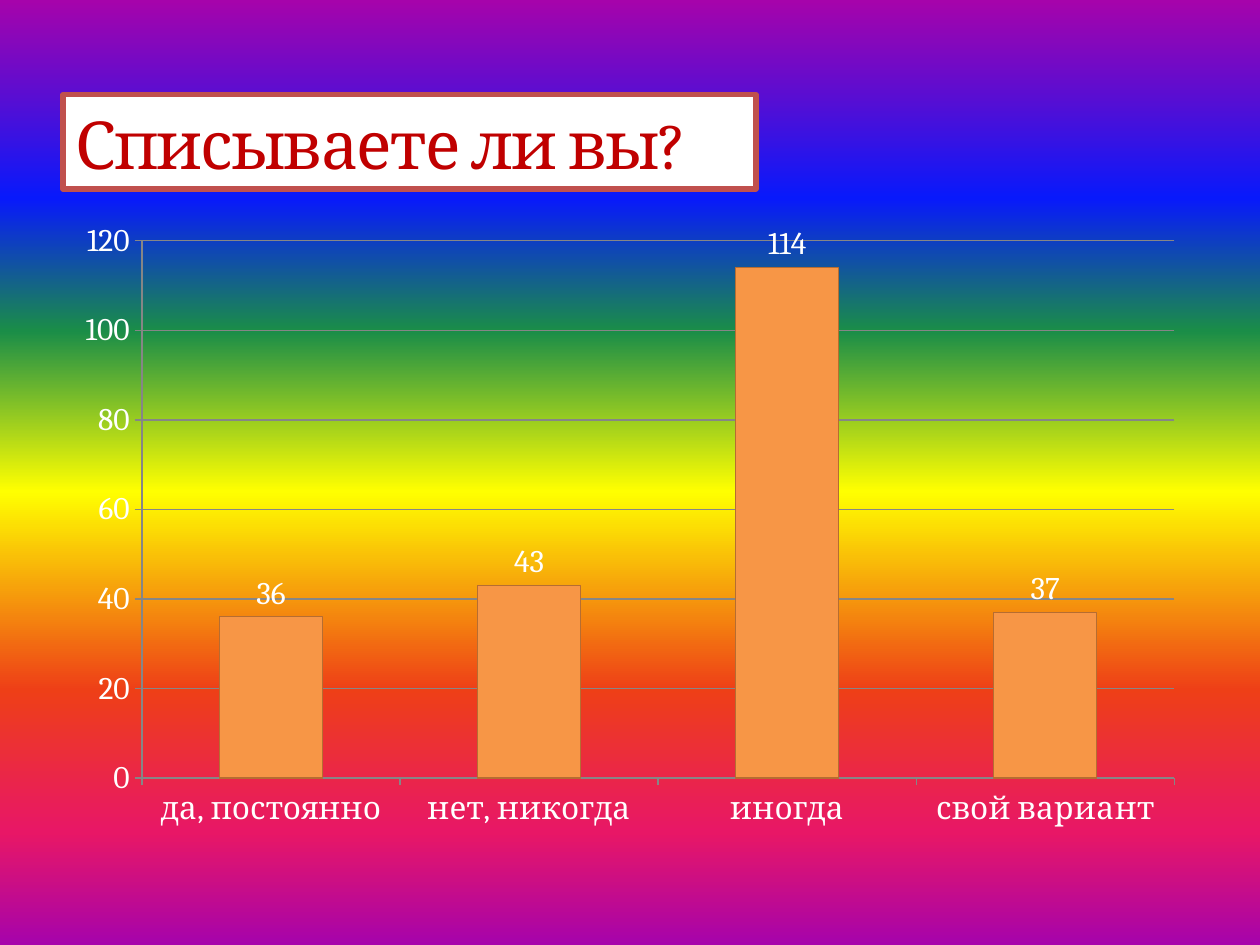
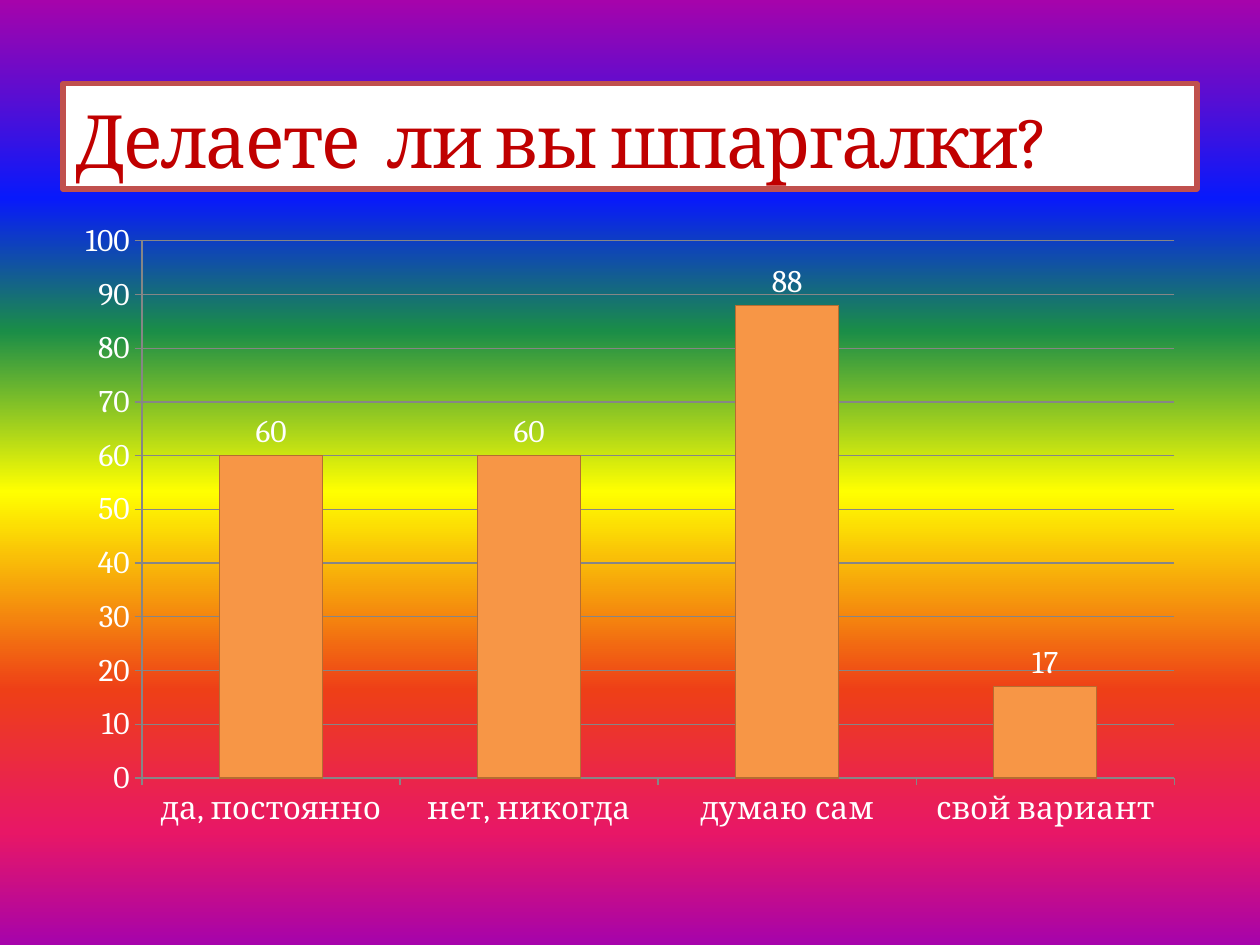
from lxml.etree import SubElement
from pptx import Presentation
from pptx.chart.data import CategoryChartData
from pptx.dml.color import RGBColor
from pptx.enum.chart import XL_CHART_TYPE, XL_LABEL_POSITION, XL_TICK_MARK
from pptx.enum.shapes import MSO_SHAPE
from pptx.enum.text import MSO_ANCHOR, PP_ALIGN
from pptx.oxml import parse_xml
from pptx.oxml.ns import nsdecls, qn
from pptx.util import Cm, Pt

HUES = {
    "white": "FFFFFF", "title": "C00000", "frame": "C0504D", "edge": "1B406E",
    "bar": "F79646", "rim": "B66D31", "grid": "868686",
}
BANDS = [
    (0, "A603AB"), (21, "0819FB"), (35, "1A8D48"), (52, "FFFF00"),
    (73, "EE3F17"), (88, "E81766"), (100, "A603AB"),
]
FONT = "Cambria"
LEFT, BASE = 1.27, 3.81
SLIDES = [
    ("Списываете ли вы?", 37.8, 13.97, 1.9, "иногда", (36, 43, 114, 37), 120, 20),
    ("Делаете  ли вы шпаргалки?", 42, 22.86, 2.12, "думаю сам", (60, 60, 88, 17), 100, 10),
]


def hue(name):
    return RGBColor.from_string(HUES[name])


def ink(line, name, width):
    line.color.rgb = hue(name)
    line.width = Pt(width)


deck = Presentation()
deck.slide_width, deck.slide_height = Cm(25.4), Cm(19.05)

for title, size, width, height, third, votes, top, step in SLIDES:
    slide = deck.slides.add_slide(deck.slide_layouts[6])
    slide.background.fill.gradient()
    grad = slide.element.find(".//" + qn("a:gradFill"))
    stops = grad.find(qn("a:gsLst"))
    for stop in list(stops):
        stops.remove(stop)
    for place, tint in BANDS:
        stop = SubElement(stops, qn("a:gs"), pos=str(place * 1000))
        SubElement(stop, qn("a:srgbClr"), val=tint)
    grad.find(qn("a:lin")).set("ang", "5400000")

    data = CategoryChartData()
    data.categories = ["да, постоянно", "нет, никогда", third, "свой вариант"]
    data.add_series("Series 1", votes)
    chart = slide.shapes.add_chart(
        XL_CHART_TYPE.COLUMN_CLUSTERED, Cm(LEFT), Cm(4.23), Cm(22.86), Cm(12.7), data
    ).chart
    chart.has_legend = False
    chart.has_title = False
    chart.font.name = FONT
    chart.font.size = Pt(18)
    chart.font.color.rgb = hue("white")
    for axis in (chart.category_axis, chart.value_axis):
        axis.major_tick_mark = XL_TICK_MARK.OUTSIDE
        ink(axis.format.line, "grid", 0.75)
    scale = chart.value_axis
    scale.minimum_scale, scale.maximum_scale, scale.major_unit = 0, top, step
    scale.has_major_gridlines = True
    ink(scale.major_gridlines.format.line, "grid", 0.75)

    plot = chart.plots[0]
    plot.gap_width = 150
    plot.vary_by_categories = False
    plot.has_data_labels = True
    plot.data_labels.show_value = True
    plot.data_labels.position = XL_LABEL_POSITION.OUTSIDE_END
    bars = plot.series[0].format
    bars.fill.solid()
    bars.fill.fore_color.rgb = hue("bar")
    ink(bars.line, "rim", 0.75)

    box = slide.shapes.add_shape(
        MSO_SHAPE.RECTANGLE, Cm(LEFT), Cm(BASE - height), Cm(width), Cm(height)
    )
    box.shadow.inherit = False
    box.fill.solid()
    box.fill.fore_color.rgb = hue("white")
    ink(box.line, "frame", 3)
    frame = box.text_frame
    frame.word_wrap = True
    frame.vertical_anchor = MSO_ANCHOR.BOTTOM
    para = frame.paragraphs[0]
    para.alignment = PP_ALIGN.LEFT
    run = para.add_run()
    run.text = title
    run.font.name = FONT
    run.font.size = Pt(size)
    run.font.color.rgb = hue("title")
    props = run.font._element if hasattr(run.font, "_element") else run._r.get_or_add_rPr()
    props.set("spc", "-100")
    props.insert(0, parse_xml(
        f'<a:ln {nsdecls("a")} w="3175"><a:solidFill><a:srgbClr val="{HUES["edge"]}">'
        '<a:alpha val="25000"/></a:srgbClr></a:solidFill></a:ln>'
    ))

deck.save("out.pptx")
